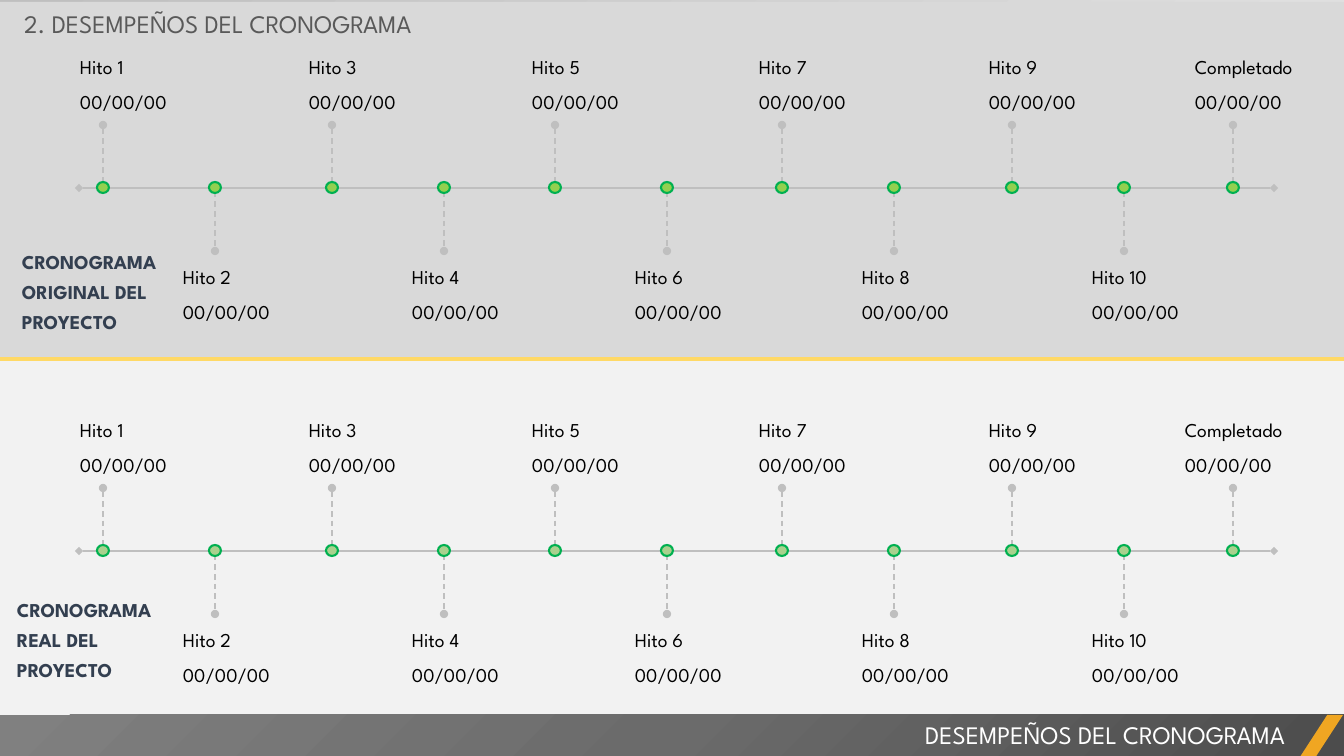
from lxml import etree
from pptx import Presentation
from pptx.dml.color import RGBColor
from pptx.enum.dml import MSO_LINE
from pptx.enum.shapes import MSO_CONNECTOR, MSO_SHAPE
from pptx.enum.text import MSO_ANCHOR, MSO_AUTO_SIZE, PP_ALIGN
from pptx.oxml import parse_xml
from pptx.oxml.ns import qn
from pptx.util import Pt

RECTANGLE, OVAL, SLANT = MSO_SHAPE.RECTANGLE, MSO_SHAPE.OVAL, MSO_SHAPE.PARALLELOGRAM
STRAIGHT, DASH = MSO_CONNECTOR.STRAIGHT, MSO_LINE.DASH
LEFT, RIGHT, TOP = PP_ALIGN.LEFT, PP_ALIGN.RIGHT, MSO_ANCHOR.TOP
FIXED = MSO_AUTO_SIZE.NONE

FONT = "League Spartan"
GREY = "BFBFBF"
TITLE = "2. DESEMPEÑOS DEL CRONOGRAMA"
FOOTER = "DESEMPEÑOS DEL CRONOGRAMA"
DATE = "00/00/00"
MILESTONES = [
    ("Hito 1", 103), ("Hito 2", 215), ("Hito 3", 332), ("Hito 4", 444),
    ("Hito 5", 555), ("Hito 6", 667), ("Hito 7", 782), ("Hito 8", 894),
    ("Hito 9", 1012), ("Hito 10", 1124), ("Completado", 1233),
]
TIMELINES = [
    {"caption": "CRONOGRAMA ORIGINAL DEL PROYECTO", "caption_box": (10, 237, 207, 103),
     "axis": 188, "dot": "92D050", "last_shift": 48},
    {"caption": "CRONOGRAMA REAL DEL PROYECTO", "caption_box": (5, 585, 192, 103),
     "axis": 551, "dot": "A9D18E", "last_shift": 58},
]
PANELS = [((-2, 2, 1346, 357), "D9D9D9"), ((-2, 359, 1346, 399), "F2F2F2")]
FOOTER_STOPS = [(0, "4C4C4C"), (50, "6B6B6B"), (100, "808080")]
NAMESPACE = "http://schemas.openxmlformats.org/drawingml/2006/main"


def px(value):
    return round(value * 914400 / 100.8)


def color(value):
    return RGBColor.from_string(value)


def add_block(shapes, kind, bounds, fill, outline=None):
    block = shapes.add_shape(kind, *map(px, bounds))
    block.shadow.inherit = False
    block.fill.solid()
    block.fill.fore_color.rgb = color(fill)
    if outline:
        block.line.color.rgb = color(outline)
        block.line.width = Pt(1.5)
    else:
        block.line.fill.background()
    return block


def add_line(shapes, start, end, stroke, width, tip=None, dash=None):
    line = shapes.add_connector(STRAIGHT, *map(px, start + end))
    line.line.color.rgb = color(stroke)
    line.line.width = Pt(width)
    if dash:
        line.line.dash_style = dash
    if tip:
        outline = line.line._get_or_add_ln()
        for end_name in ("headEnd", "tailEnd"):
            etree.SubElement(outline, qn("a:" + end_name), type=tip)
    etree.SubElement(line._element.spPr, qn("a:effectLst"))


def write(box, lines, size, ink, align=LEFT, bold=False, after=0, spacing=None):
    frame = box.text_frame
    frame.word_wrap = True
    frame.auto_size = FIXED
    frame.vertical_anchor = TOP
    frame.text = "\n".join(lines)
    for para in frame.paragraphs:
        para.alignment = align
        para.space_after = Pt(after)
        if spacing:
            para.line_spacing = Pt(spacing)
        para.font.name = FONT
        para.font.size = Pt(size)
        para.font.bold = bold
        para.font.color.rgb = color(ink)


def add_text(shapes, bounds, lines, size, ink, **style):
    box = shapes.add_textbox(*map(px, bounds))
    write(box, lines, size, ink, **style)
    return box


def add_timeline(slide, timeline):
    shapes = slide.shapes.add_group_shape().shapes
    axis = timeline["axis"]
    add_line(shapes, (79, axis), (1274, axis), GREY, 1.5, "diamond")
    for index, (name, x) in enumerate(MILESTONES):
        above = index % 2 == 0
        stem = (axis - 63, axis) if above else (axis, axis + 63)
        shift = 33 if above else 42
        if index == len(MILESTONES) - 1:
            shift = timeline["last_shift"]
        label_top = axis - 138 if above else axis + 72
        add_line(shapes, (x, stem[0]), (x, stem[1]), GREY, 1, "oval", DASH)
        add_block(shapes, OVAL, (x - 6, axis - 6, 12, 11), timeline["dot"], "00B050")
        add_text(shapes, (x - shift, label_top, 192, 65), [name, DATE], 14, "000000", after=8)
    caption = add_text(slide.shapes, timeline["caption_box"], [timeline["caption"]],
                       14, "333F50", bold=True, spacing=21.5)
    frame = caption.text_frame
    frame.margin_left = frame.margin_right = px(12)
    frame.margin_top = frame.margin_bottom = px(6)


def add_footer(shapes):
    band = add_block(shapes, RECTANGLE, (0, 715, 1344, 42), "6B6B6B")
    stops = "".join(
        f'<a:gs pos="{place * 1000}"><a:srgbClr val="{tone}"/></a:gs>'
        for place, tone in FOOTER_STOPS)
    gradient = parse_xml(
        f'<a:gradFill xmlns:a="{NAMESPACE}"><a:gsLst>{stops}</a:gsLst>'
        '<a:path path="circle"><a:fillToRect l="100000" t="100000"/></a:path></a:gradFill>')
    properties = band._element.spPr
    properties.replace(properties.find(qn("a:solidFill")), gradient)
    add_text(shapes, (529, 714, 766, 40), [FOOTER], 18, "FFFFFF", align=RIGHT)
    accent = add_block(shapes, SLANT, (1300, 715, 43, 42), "F0A622")
    accent.adjustments[0] = 0.65


def main():
    deck = Presentation()
    deck.slide_width, deck.slide_height = px(1344), px(756)
    page = deck.slides.add_slide(deck.slide_layouts[5])
    backdrop = page.background.fill
    backdrop.gradient()
    backdrop.gradient_angle = 135
    for stop, tone in zip(backdrop.gradient_stops, ("F2F2F2", GREY)):
        stop.color.rgb = color(tone)

    for bounds, fill in PANELS:
        add_block(page.shapes, RECTANGLE, bounds, fill)
    for timeline in TIMELINES:
        add_timeline(page, timeline)
    add_line(page.shapes, (0, 359), (1344, 359), "FFD966", 2.25)

    title = page.shapes.title
    title.left, title.top, title.width, title.height = map(px, (14, 3, 535, 40))
    write(title, [TITLE], 18, "595959")
    page.shapes._spTree.append(title._element)
    add_footer(page.shapes)
    deck.save("out.pptx")


if __name__ == "__main__":
    main()
